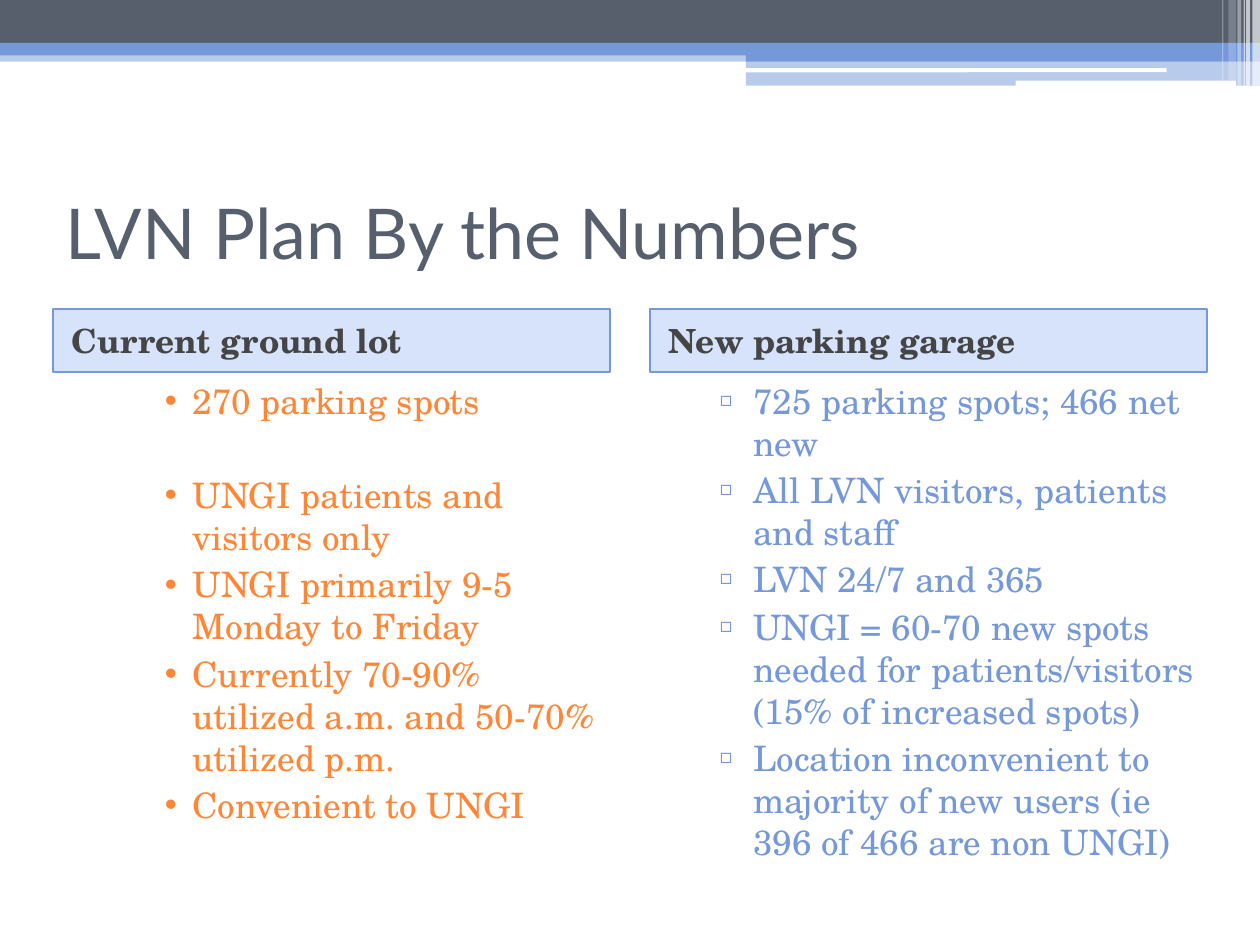
from lxml import etree
from pptx import Presentation
from pptx import util as u
from pptx.dml.color import RGBColor
from pptx.enum import shapes, text
from pptx.oxml import ns

WIDE, HIGH = u.Inches(10), u.Inches(7.5)
SLATE = RGBColor(0x57, 0x5F, 0x6D)
BLUE = RGBColor(0x75, 0x98, 0xD9)
SKY = RGBColor(0x5C, 0x90, 0xF2)
CORAL = RGBColor(0xFE, 0x86, 0x37)
INK = RGBColor(0x45, 0x45, 0x45)
WHITE = RGBColor(0xFF, 0xFF, 0xFF)
SANS, SERIF = "Lato", "TeX Gyre Schola"
RECT = shapes.MSO_SHAPE.RECTANGLE
ROUND = shapes.MSO_SHAPE.ROUNDED_RECTANGLE

BARS = [
    (RECT, 0, 5.33, 100, 1.2, BLUE, 50),
    (RECT, 0, 0, 100, 4.53, SLATE, 100),
    (RECT, 0, 4.53, 100, 1.33, BLUE, 100),
    (RECT, 59.2, 5.2, 40.8, 1.3, BLUE, 100),
    (RECT, 59.2, 6.4, 40.8, 2.67, BLUE, 50),
    (ROUND, 59.1, 7.2, 33.5, 0.45, WHITE, 100),
    (ROUND, 80.6, 8.53, 17.5, 0.6, WHITE, 100),
]
STRIPES = [
    (99.4, 0.6, 9.07, 65),
    (98.9, 0.3, 9.07, 65),
    (98.7, 0.1, 9.07, 60),
    (98.2, 0.3, 9.07, 40),
    (97.5, 0.6, 8.53, 20),
    (97, 0.1, 8.53, 30),
]
LEFT, RIGHT, SPAN = 4.2, 51.6, 44.2
GAP, SKIP = 3, 30

LOT = [
    ("270 parking spots", GAP),
    ("UNGI patients and visitors only", SKIP),
    ("UNGI primarily 9-5 Monday to Friday", GAP),
    ("Currently 70-90% utilized a.m. and 50-70% utilized p.m.", GAP),
    ("Convenient to UNGI", GAP),
]
GARAGE = [
    ("725 parking spots; 466 net new", GAP),
    ("All LVN visitors, patients and staff", GAP),
    ("LVN 24/7 and 365", GAP),
    ("UNGI = 60-70 new spots needed for patients/visitors "
     "(15% of increased spots)", GAP),
    ("Location inconvenient to majority of new users "
     "(ie 396 of 466 are non UNGI)", GAP),
]


def place(x, y, w, h):
    return (int(WIDE * x / 100), int(HIGH * y / 100),
            int(WIDE * w / 100), int(HIGH * h / 100))


def add_bar(slide, kind, x, y, w, h, color, alpha=100):
    bar = slide.shapes.add_shape(kind, *place(x, y, w, h))
    bar.shadow.inherit = False
    bar.fill.solid()
    bar.fill.fore_color.rgb = color
    bar.line.fill.background()
    if alpha < 100:
        tint = bar.fill._xPr.find(".//" + ns.qn("a:srgbClr"))
        etree.SubElement(tint, ns.qn("a:alpha"), val=str(alpha * 1000))
    return bar


def add_run(para, words, size, font, color, bold=False):
    run = para.add_run()
    run.text = words
    run.font.size = u.Pt(size)
    run.font.name = font
    run.font.bold = bold
    run.font.color.rgb = color


def indent(para, left, first=0):
    props = para._p.get_or_add_pPr()
    props.set("marL", str(u.Inches(left)))
    props.set("indent", str(u.Inches(first)))
    return props


def add_dot(props, mark, color):
    tone = etree.SubElement(props, ns.qn("a:buClr"))
    etree.SubElement(tone, ns.qn("a:srgbClr"), val=str(color))
    etree.SubElement(props, ns.qn("a:buSzPct"), val="80000")
    etree.SubElement(props, ns.qn("a:buFont"), typeface=SERIF)
    etree.SubElement(props, ns.qn("a:buChar"), char=mark)


def add_box(slide, x, y, w, h):
    frame = slide.shapes.add_textbox(*place(x, y, w, h)).text_frame
    frame.word_wrap = True
    return frame


def add_title(slide, words):
    frame = add_box(slide, LEFT, 16.67, 91.7, 15.6)
    frame.vertical_anchor = text.MSO_ANCHOR.MIDDLE
    add_run(frame.paragraphs[0], words, 40, SANS, SLATE)


def add_head(slide, x, words):
    head = add_bar(slide, RECT, x, 32.67, SPAN, 6.67, SKY, 25)
    head.line.color.rgb = BLUE
    head.line.width = u.Pt(1)
    frame = head.text_frame
    frame.word_wrap = True
    frame.vertical_anchor = text.MSO_ANCHOR.MIDDLE
    para = frame.paragraphs[0]
    para.alignment = text.PP_ALIGN.LEFT
    para.space_before = u.Pt(GAP)
    indent(para, 0.05)
    add_run(para, words, 19, SERIF, INK, True)


def add_list(slide, x, items, mark, color, left, first):
    frame = add_box(slide, x, 39.47, SPAN, 56.67)
    for row, (words, gap) in enumerate(items):
        para = frame.add_paragraph() if row else frame.paragraphs[0]
        para.space_before = u.Pt(gap)
        add_dot(indent(para, left, first), mark, color)
        add_run(para, words, 20, SERIF, color)


def main():
    deck = Presentation()
    deck.slide_width, deck.slide_height = WIDE, HIGH
    slide = deck.slides.add_slide(deck.slide_layouts[6])
    for bar in BARS:
        add_bar(slide, *bar)
    for x, w, h, alpha in STRIPES:
        add_bar(slide, RECT, x, 0, w, h, WHITE, alpha)
    add_title(slide, "LVN Plan By the Numbers")
    add_head(slide, LEFT, "Current ground lot")
    add_head(slide, RIGHT, "New parking garage")
    add_list(slide, LEFT, LOT, "•", CORAL, 1.01, -0.24)
    add_list(slide, RIGHT, GARAGE, "▫", BLUE, 0.72, -0.27)
    deck.save("out.pptx")


if __name__ == "__main__":
    main()
